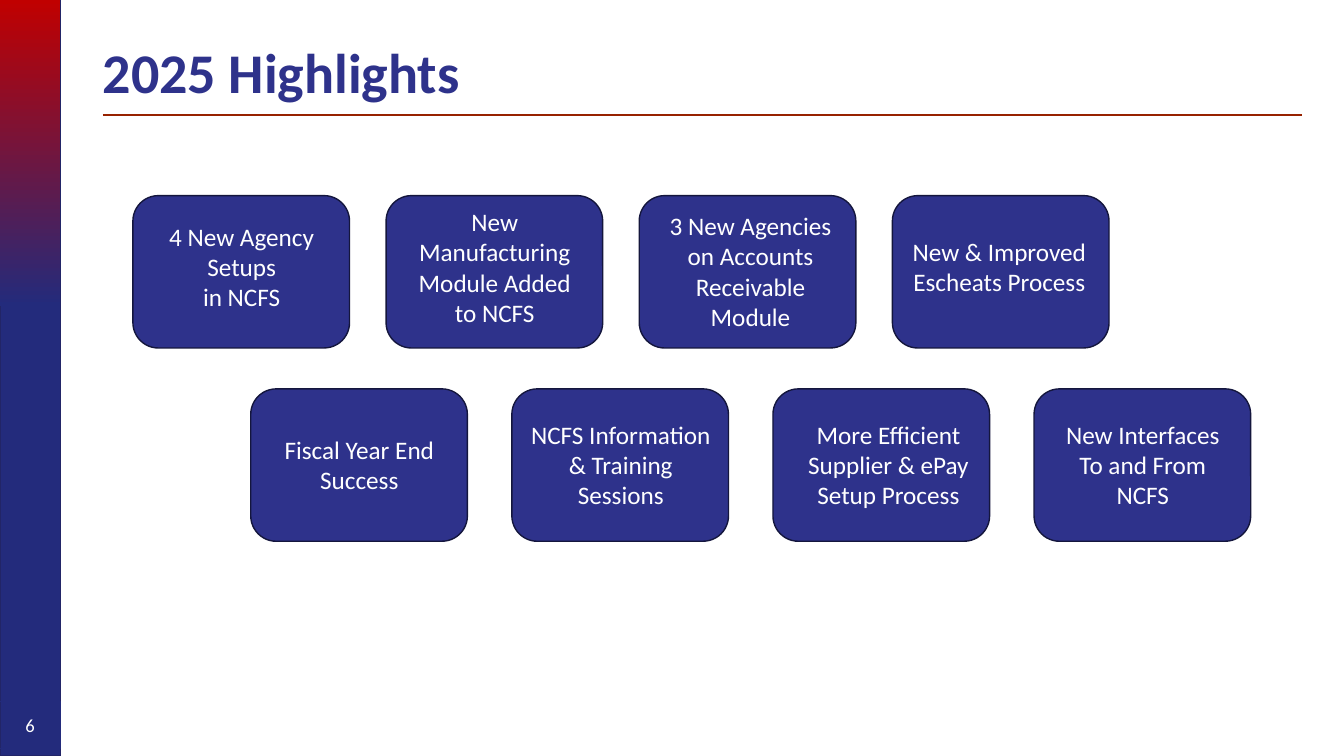
from dataclasses import dataclass
from pptx import Presentation
from pptx.dml.color import RGBColor as RGB
from pptx.enum.shapes import MSO_CONNECTOR as CONN, MSO_SHAPE as SHAPE
from pptx.enum.text import MSO_ANCHOR as ANCHOR, MSO_AUTO_SIZE as FIT, PP_ALIGN as ALIGN
from pptx.oxml.ns import qn
from pptx.util import Cm, Pt


@dataclass(frozen=True)
class Theme:
    font: str = "Calibri"
    indigo: RGB = RGB(0x2E, 0x32, 0x8B)
    indigo_edge: RGB = RGB(0x14, 0x16, 0x3D)
    navy: RGB = RGB(0x23, 0x2B, 0x7C)
    navy_edge: RGB = RGB(0x22, 0x25, 0x67)
    red: RGB = RGB(0xC0, 0x00, 0x00)
    rule: RGB = RGB(0x97, 0x22, 0x00)
    white: RGB = RGB(0xFF, 0xFF, 0xFF)
    title_size: Pt = Pt(40)
    card_size: Pt = Pt(18)
    number_size: Pt = Pt(13.3)


T = Theme()


def add_box(kind, x, y, w, h, fill=None, line=None, weight=1):
    sp = s.shapes.add_shape(kind, Cm(x), Cm(y), Cm(w), Cm(h))
    sp.shadow.inherit = False
    if fill is None:
        sp.fill.background()
    else:
        sp.fill.solid()
        sp.fill.fore_color.rgb = fill
    if line is None:
        sp.line.fill.background()
    else:
        sp.line.color.rgb = line
        sp.line.width = Pt(weight)
    return sp


def write(tf, text, size, color, align=ALIGN.CENTER, bold=False):
    tf.word_wrap = True
    tf.text = text
    for p in tf.paragraphs:
        p.alignment = align
        for r in p.runs:
            r.font.name, r.font.size, r.font.bold = T.font, size, bold
            r.font.color.rgb = color


prs = Presentation()
prs.slide_width, prs.slide_height = Cm(33.87), Cm(19.05)
s = prs.slides.add_slide(prs.slide_layouts[5])

# Side band with red fade
BAND_W = 1.52
add_box(SHAPE.RECTANGLE, 0, 0, BAND_W, 19.05, T.navy, T.navy_edge)
fade = add_box(SHAPE.RECTANGLE, 0, 0, BAND_W, 7.72)
fade.fill.gradient()
fade.fill.gradient_angle = 270
for stop, color in zip(fade.fill.gradient_stops, (T.red, T.navy)):
    stop.color.rgb = color

# Title and rule
title = s.shapes.title
title.left, title.top, title.width, title.height = Cm(2.34), Cm(1.02), Cm(26.47), Cm(1.75)
tf = title.text_frame
write(tf, "2025 Highlights", T.title_size, T.indigo, ALIGN.LEFT, True)
tf.auto_size = FIT.NONE
tf.vertical_anchor = ANCHOR.MIDDLE
tf.paragraphs[0].line_spacing = 0.9

rule = s.shapes.add_connector(CONN.STRAIGHT, Cm(2.59), Cm(2.9), Cm(32.82), Cm(2.9))
rule.line.color.rgb = T.rule
rule.line.width = Pt(1.5)
effects = rule.element.spPr.makeelement(qn("a:effectLst"), {})
rule.element.spPr.append(effects)

# Slide number
number = add_box(SHAPE.RECTANGLE, 0, 17.68, BAND_W, 1.19, line=T.navy, weight=0.75)
write(number.text_frame, "6", T.number_size, T.white)
number.text_frame.vertical_anchor = ANCHOR.MIDDLE

# Highlight cards: row left, top and pitch; label left, top, width, lines and text
CARD_W, CARD_H = 5.46, 3.84
LINE_H, LABEL_PAD = 0.77, 0.27
rows = [
    (3.35, 4.93, 6.38, [
        (3.12, 5.44, 5.94, 3, "4 New Agency Setups\nin NCFS"),
        (10.08, 5.08, 4.78, 4, "New Manufacturing Module Added to NCFS"),
        (16.59, 5.18, 4.65, 4, "3 New Agencies on Accounts Receivable Module"),
        (22.71, 5.82, 4.95, 2, "New & Improved Escheats Process"),
    ]),
    (6.32, 9.8, 6.58, [
        (6.53, 10.82, 5.05, 2, "Fiscal Year End Success"),
        (13.08, 10.44, 5.13, 3, "NCFS Information & Training Sessions"),
        (19.99, 10.44, 4.8, 3, "More Efficient Supplier & ePay Setup Process"),
        (26.26, 10.44, 5.08, 3, "New Interfaces To and From NCFS"),
    ]),
]
for left, top, pitch, labels in rows:
    for i, (x, y, w, lines, text) in enumerate(labels):
        add_box(SHAPE.ROUNDED_RECTANGLE, left + i * pitch, top, CARD_W, CARD_H,
                T.indigo, T.indigo_edge)
        label = s.shapes.add_textbox(Cm(x), Cm(y), Cm(w), Cm(LABEL_PAD + lines * LINE_H))
        write(label.text_frame, text, T.card_size, T.white)
        label.text_frame.auto_size = FIT.SHAPE_TO_FIT_TEXT

prs.save("out.pptx")
